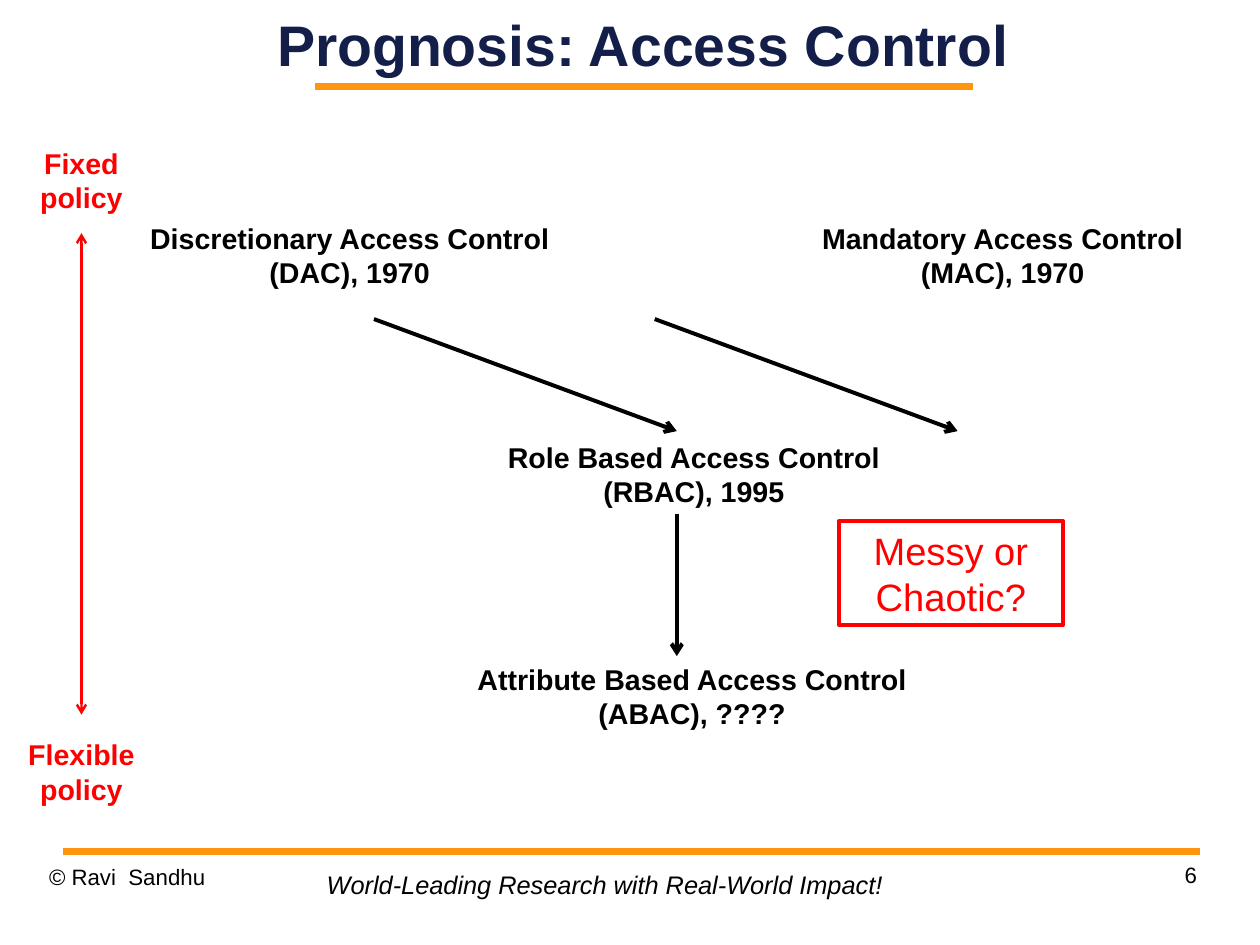
"""Build the access control prognosis slide."""
from lxml import etree
from pptx import Presentation
from pptx.dml.color import RGBColor
from pptx.enum import shapes, text
from pptx.oxml import ns
from pptx.util import Cm, Pt

COLORS = {"navy": "131F49", "orange": "FF950E", "red": "FF0000", "black": "000000"}
ALIGN = text.PP_ALIGN


def rgb(name):
    return RGBColor.from_string(COLORS[name])


def style(p, size, color="black", bold=False, italic=False, align=ALIGN.CENTER):
    p.alignment = align
    font = p.font
    font.name, font.size, font.bold, font.italic = "Arial", Pt(size), bold, italic
    font.color.rgb = rgb(color)


def clear_margins(tf):
    tf.margin_left = tf.margin_right = tf.margin_top = tf.margin_bottom = 0


def add_text(s, box, lines, size, wrap=True, inset=True, spacing=None, **look):
    tf = s.shapes.add_textbox(*map(Cm, box)).text_frame
    tf.word_wrap = wrap
    if not inset:
        clear_margins(tf)
    tf.text = lines
    for p in tf.paragraphs:
        style(p, size, **look)
        if spacing:
            p.line_spacing = spacing


def add_line(s, start, end, color, width, arrows=()):
    c = s.shapes.add_connector(shapes.MSO_CONNECTOR.STRAIGHT, *map(Cm, start + end))
    c.line.color.rgb = rgb(color)
    c.line.width = Pt(width)
    ln = c.line._get_or_add_ln()
    for tag in arrows:
        etree.SubElement(ln, ns.qn(f"a:{tag}"), type="arrow")
    etree.SubElement(c._element.spPr, ns.qn("a:effectLst"))


def add_title(s, box):
    x, y, w, h = box
    sp = s.shapes.title
    sp.left, sp.top, sp.width, sp.height = map(Cm, box)
    tf = sp.text_frame
    tf.text = "Prognosis: Access Control"
    tf.auto_size = text.MSO_AUTO_SIZE.NONE
    tf.vertical_anchor = text.MSO_ANCHOR.MIDDLE
    clear_margins(tf)
    style(tf.paragraphs[0], 36, "navy", bold=True)
    add_line(s, (x + 0.89, y + h), (x + w - 0.83, y + h), "orange", 4.31)


def add_models(s, box):
    x, y, w, h = box
    models = [
        (0, 0, 9.4, "Discretionary Access Control (DAC), 1970"),
        (w - 9.4, 0, 9.4, "Mandatory Access Control (MAC), 1970"),
        (7.65, 4.87, 9.4, "Role Based Access Control (RBAC), 1995"),
        (7.09, h - 1.8, 10.44, "Attribute Based Access Control (ABAC), ????"),
    ]
    for dx, dy, width, label in models:
        add_text(s, (x + dx, y + dy, width, 1.8), label, 18, bold=True)
    arrows = [
        ((5.24, 2.31), (11.97, 4.8)),
        ((11.48, 2.31), (18.21, 4.8)),
        ((11.97, 6.65), (11.97, 9.8)),
    ]
    for (x1, y1), (x2, y2) in arrows:
        add_line(s, (x + x1, y + y1), (x + x2, y + y2), "black", 2.5, ["tailEnd"])


def add_question(s, box):
    sp = s.shapes.add_shape(shapes.MSO_SHAPE.RECTANGLE, *map(Cm, box))
    sp.shadow.inherit = False
    sp.fill.background()
    sp.line.color.rgb = rgb("red")
    sp.line.width = Pt(2.5)
    tf = sp.text_frame
    tf.word_wrap = True
    tf.text = "Messy or Chaotic?"
    style(tf.paragraphs[0], 24, "red")


def add_policy_axis(s, box):
    x, y, w, h = box
    middle = x + w / 2
    for top, label in ((y, "Fixed\npolicy"), (y + h - 1.8, "Flexible\npolicy")):
        add_text(s, (x, top, w, 1.8), label, 18, wrap=False, color="red", bold=True)
    add_line(s, (middle, y + 2.06), (middle, y + h - 2.18), "red", 1.5,
             ["headEnd", "tailEnd"])


def add_footer(s, box):
    x, y, w, h = box
    add_line(s, (x, y), (x + w, y), "orange", 4.31)
    add_text(s, (x - 0.31, y + 0.26, 6.53, 1.45), "© Ravi  Sandhu", 14,
             inset=False, spacing=1.01, align=ALIGN.LEFT)
    add_text(s, (x + w - 6.6, y + 0.21, 6.53, 1.45), "6", 14,
             inset=False, spacing=1.01, align=ALIGN.RIGHT)
    add_text(s, (x + 5.61, y + 0.26, 12.9, 0.94),
             "World-Leading Research with Real-World Impact!", 16,
             wrap=False, italic=True, align=ALIGN.LEFT)


def main():
    prs = Presentation()
    prs.slide_width, prs.slide_height = Cm(28), Cm(21)
    s = prs.slides.add_slide(prs.slide_layouts.get_by_name("Title Only"))
    add_title(s, (6.12, 0, 16.33, 1.92))
    add_models(s, (3.07, 4.78, 23.91, 11.6))
    add_policy_axis(s, (0.36, 3.12, 2.9, 14.94))
    add_question(s, (18.64, 11.58, 4.98, 2.31))
    add_footer(s, (1.4, 18.92, 25.27, 1.71))
    prs.save("out.pptx")


if __name__ == "__main__":
    main()
